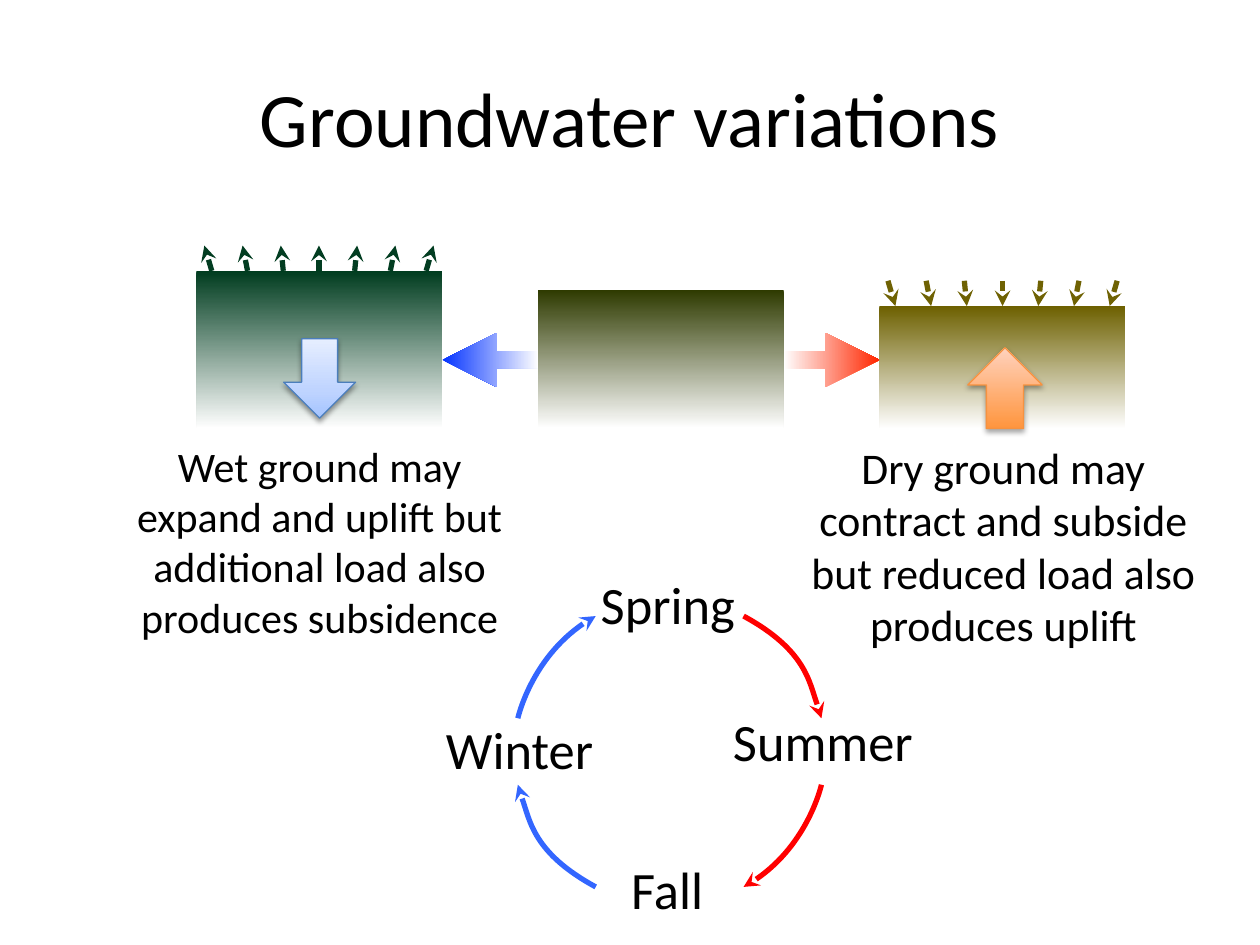
"""Build the slide on seasonal groundwater variations."""
from copy import deepcopy

from lxml.etree import SubElement
from pptx import Presentation
from pptx.dml.color import RGBColor
from pptx.enum.shapes import MSO_CONNECTOR, MSO_SHAPE
from pptx.enum.text import MSO_ANCHOR, PP_ALIGN
from pptx.oxml.ns import qn
from pptx.util import Cm, Pt


def add_gradient_shape(kind, bounds, angle, stops):
    shape = page.shapes.add_shape(kind, *map(Cm, bounds))
    shape.shadow.inherit = False
    shape.line.fill.background()
    shape.fill.gradient()
    shape.fill.gradient_angle = angle
    stop_list = shape._element.spPr.find(qn("a:gradFill")).find(qn("a:gsLst"))
    for _ in stops[2:]:
        stop_list.append(deepcopy(stop_list[-1]))
    for stop, (position, color) in zip(shape.fill.gradient_stops, stops):
        stop.position = position
        stop.color.rgb = RGBColor.from_string(color)
    return shape


def style_arrow(arrow, color, arrow_end):
    arrow.line.color.rgb = RGBColor.from_string(color)
    arrow.line.width = Pt(3)
    properties = arrow._element.spPr
    SubElement(properties.find(qn("a:ln")), qn(arrow_end), type="stealth")
    if properties.find(qn("a:effectLst")) is None:
        SubElement(properties, qn("a:effectLst"))


deck = Presentation()
deck.slide_width, deck.slide_height = Cm(25.4), Cm(19.05)
page = deck.slides.add_slide(deck.slide_layouts[6])

ground_width, ground_bottom = 4.95, 8.64
for left, top, color in [(3.96, 5.46, "003C1F"), (10.85, 5.84, "2E3A00"), (17.73, 6.17, "6D6000")]:
    bounds = (left, top, ground_width, ground_bottom - top)
    add_gradient_shape(MSO_SHAPE.RECTANGLE, bounds, 270, [(0, color), (1, "FFFFFF")])

for kind, left, stops in [
    (MSO_SHAPE.LEFT_ARROW, 8.92, [(0, "0433FF"), (1, "FFFFFF")]),
    (MSO_SHAPE.RIGHT_ARROW, 15.8, [(0, "FFFFFF"), (1, "FF2600")]),
]:
    arrow = add_gradient_shape(kind, (left, 6.71, 1.93, 1.09), 0, stops)
    arrow.adjustments[0] = 0.32
    arrow.adjustments[1] = 1

for center, ground_top, color, arrow_end in [
    (6.43, 5.46, "023D21", "a:headEnd"),
    (20.21, 6.17, "6F6203", "a:tailEnd"),
]:
    for step in range(-3, 4):
        arrow = page.shapes.add_connector(
            MSO_CONNECTOR.STRAIGHT,
            Cm(center + step * 0.77), Cm(ground_top - 0.51),
            Cm(center + step * 0.72), Cm(ground_top),
        )
        style_arrow(arrow, color, arrow_end)

for side_x, inward, side_y, outward, color, arrow_end in [
    (10.44, 1, 14.48, -1, "3366FF", "a:tailEnd"),
    (10.44, 1, 15.82, 1, "3366FF", "a:headEnd"),
    (16.56, -1, 14.48, -1, "FF0000", "a:headEnd"),
    (16.56, -1, 15.82, 1, "FF0000", "a:tailEnd"),
]:
    start = (Cm(side_x), Cm(side_y))
    control = (Cm(side_x + inward * 0.3), Cm(side_y + outward * 1.37))
    end = (Cm(side_x + inward * 1.57), Cm(side_y + outward * 2.06))
    builder = page.shapes.build_freeform(*start)
    builder.add_line_segments([start, control, end], close=False)
    arc = builder.convert_to_shape()
    arc.shadow.inherit = False
    arc.fill.background()
    segments = list(arc._element.iter(qn("a:lnTo")))
    curve = SubElement(segments[0].getparent(), qn("a:cubicBezTo"))
    for segment in segments:
        curve.append(segment[0])
        segment.getparent().remove(segment)
    style_arrow(arc, color, arrow_end)

for bounds, size, lines in [
    ((1.27, 0.76, 22.86, 3.18), 44, ["Groundwater variations"]),
    ((16.21, 8.76, 8.03, 4.47), 25,
     ["Dry ground may", "contract and subside", "but reduced load also", "produces uplift"]),
    ((2.62, 8.76, 7.65, 4.29), 24,
     ["Wet ground may", "expand and uplift but", "additional load also", "produces subsidence"]),
    ((11.99, 11.43, 2.95, 1.47), 30, ["Spring"]),
    ((14.66, 14.2, 3.86, 1.47), 30, ["Summer"]),
    ((12.6, 17.17, 1.7, 1.47), 30, ["Fall"]),
    ((8.86, 14.35, 3.23, 1.47), 30, ["Winter"]),
]:
    box = page.shapes.add_textbox(*map(Cm, bounds))
    frame = box.text_frame
    frame.word_wrap = False
    frame.vertical_anchor = MSO_ANCHOR.MIDDLE
    frame.margin_left = frame.margin_right = frame.margin_top = frame.margin_bottom = Cm(0.1)
    para = frame.paragraphs[0]
    para.alignment = PP_ALIGN.CENTER
    for index, line in enumerate(lines):
        if index:
            para.add_line_break()
        span = para.add_run()
        span.text = line
        span.font.name = "Calibri"
        span.font.size = Pt(size)
        span.font.color.rgb = RGBColor.from_string("000000")

for kind, bounds, stops, outline, opacity in [
    (MSO_SHAPE.DOWN_ARROW, (5.72, 6.83, 1.45, 1.6),
     [(0, "A4C4FF"), (0.35, "BFD4FF"), (1, "E6EEFF")], "4B7EBC", 38),
    (MSO_SHAPE.UP_ARROW, (19.51, 7.01, 1.5, 1.63),
     [(0, "FF953E"), (1, "FFD2BD")], "F69240", 35),
]:
    arrow = add_gradient_shape(kind, bounds, 90, stops)
    arrow.line.color.rgb = RGBColor.from_string(outline)
    arrow.line.width = Pt(0.75)
    effects = arrow._element.spPr.find(qn("a:effectLst"))
    shadow = SubElement(
        effects, qn("a:outerShdw"), blurRad=str(Pt(3.1)), dist=str(Pt(1.7)),
        dir="5400000", rotWithShape="0",
    )
    shade = SubElement(shadow, qn("a:srgbClr"), val="000000")
    SubElement(shade, qn("a:alpha"), val=str(opacity * 1000))

deck.save("out.pptx")
